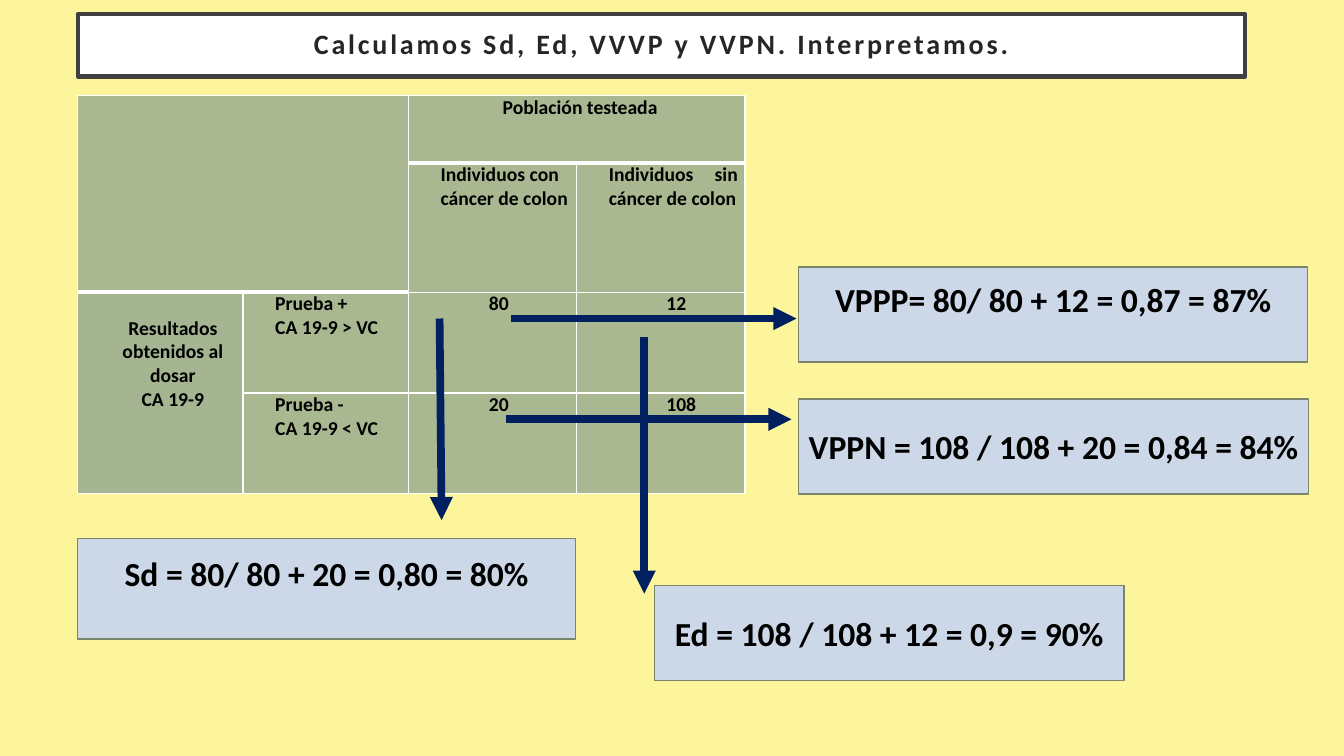
from lxml.etree import SubElement
from pptx import Presentation
from pptx.dml.color import RGBColor
from pptx.enum.shapes import MSO_CONNECTOR, MSO_SHAPE
from pptx.enum.text import MSO_ANCHOR, MSO_AUTO_SIZE, PP_ALIGN
from pptx.oxml.ns import qn
from pptx.util import Inches, Pt

CENTER, JUSTIFY = PP_ALIGN.CENTER, PP_ALIGN.JUSTIFY


def color(hex_code):
    return RGBColor.from_string(hex_code)


class SlideBuilder:
    font = "Calibri"
    background, text = "FDF59C", "000000"
    cell_fill, cell_border = "A5B592", "FFFFFF"
    box_fill, box_line, arrow = "CCD8E7", "7A866C", "002060"

    def __init__(self, prs):
        self.s = prs.slides.add_slide(prs.slide_layouts[5])
        fill = self.s.background.fill
        fill.solid()
        fill.fore_color.rgb = color(self.background)

    def paint(self, sp, fill, line, width):
        sp.fill.solid()
        sp.fill.fore_color.rgb = color(fill)
        sp.line.color.rgb = color(line)
        sp.line.width = Pt(width)

    def set_text(self, tf, lines, size, align, text=None):
        for i, line in enumerate(lines):
            p = tf.paragraphs[0] if i == 0 else tf.add_paragraph()
            p.text = line
            p.alignment = align
            p.font.name, p.font.size, p.font.bold = self.font, Pt(size), True
            p.font.color.rgb = color(text or self.text)

    def title(self, text, x, y, w, h):
        sp = self.s.shapes.title
        sp.left, sp.top, sp.width, sp.height = map(Inches, (x, y, w, h))
        self.paint(sp, "FFFFFF", "404040", 3)
        tf = sp.text_frame
        tf.word_wrap, tf.auto_size = True, MSO_AUTO_SIZE.NONE
        tf.vertical_anchor = MSO_ANCHOR.MIDDLE
        tf.margin_left = tf.margin_right = Inches(0.3)
        tf.margin_top = tf.margin_bottom = Inches(0.2)
        self.set_text(tf, [text], 20, CENTER, "262626")
        p = tf.paragraphs[0]
        p.line_spacing = 0.9
        p.font._rPr.set("spc", "200")

    def table(self, x, y, cols, rows, merges):
        frame = self.s.shapes.add_table(
            len(rows), len(cols), Inches(x), Inches(y),
            Inches(sum(cols)), Inches(sum(rows)))
        tbl = frame.table
        tbl.first_row = tbl.horz_banding = False
        for col, width in zip(tbl.columns, cols):
            col.width = Inches(width)
        for row, height in zip(tbl.rows, rows):
            row.height = Inches(height)
        for first, last in merges:
            tbl.cell(*first).merge(tbl.cell(*last))
        return tbl

    def cell(self, cell, lines=(), align=JUSTIFY, indent=0.25, top=0,
             top_border=1, bottom_border=1, alpha=94):
        cell.margin_left = cell.margin_right = Inches(0.07)
        cell.margin_top, cell.margin_bottom = Inches(top), 0
        tcPr = cell._tc.get_or_add_tcPr()
        borders = {"lnL": 1, "lnR": 1, "lnT": top_border, "lnB": bottom_border}
        for side, width in borders.items():
            ln = SubElement(tcPr, qn("a:" + side), w=str(Pt(width)))
            fill = SubElement(ln, qn("a:solidFill"))
            SubElement(fill, qn("a:srgbClr"), val=self.cell_border)
        cell.fill.solid()
        cell.fill.fore_color.rgb = color(self.cell_fill)
        clr = tcPr.find(qn("a:solidFill")).find(qn("a:srgbClr"))
        SubElement(clr, qn("a:alpha"), val=str(alpha * 1000))
        self.set_text(cell.text_frame, lines, 14, align)
        for p in cell.text_frame.paragraphs:
            pPr = p._p.get_or_add_pPr()
            pPr.set("marL", str(Inches(indent)))
            pPr.set("indent", "0")

    def arrow_line(self, x1, y1, x2, y2):
        cn = self.s.shapes.add_connector(
            MSO_CONNECTOR.STRAIGHT, *map(Inches, (x1, y1, x2, y2)))
        cn.line.color.rgb = color(self.arrow)
        cn.line.width = Pt(5.5)
        SubElement(cn.line._get_or_add_ln(), qn("a:tailEnd"), type="triangle")
        SubElement(cn._element.spPr, qn("a:effectLst"))

    def box(self, text, x, y, w, h, bottom=0.05):
        sp = self.s.shapes.add_shape(
            MSO_SHAPE.RECTANGLE, *map(Inches, (x, y, w, h)))
        sp.shadow.inherit = False
        self.paint(sp, self.box_fill, self.box_line, 1)
        tf = sp.text_frame
        tf.word_wrap = True
        tf.vertical_anchor = MSO_ANCHOR.MIDDLE
        tf.margin_left = tf.margin_right = Inches(0.05)
        tf.margin_bottom = Inches(bottom)
        self.set_text(tf, [text], 24, CENTER)


def main():
    prs = Presentation()
    prs.slide_width, prs.slide_height = Inches(13.33), Inches(7.5)
    b = SlideBuilder(prs)

    # Title
    b.title("Calculamos Sd, Ed, VVVP y VVPN. Interpretamos.",
            0.77, 0.14, 11.58, 0.62)

    # Contingency table: headers
    tbl = b.table(0.77, 0.95, [1.64, 1.64, 1.67, 1.67], [0.67, 1.28, 1, 1],
                  [((0, 0), (1, 1)), ((0, 2), (0, 3)), ((2, 0), (3, 0))])
    b.cell(tbl.cell(0, 0), bottom_border=3)
    b.cell(tbl.cell(0, 2), ["Población testeada"], CENTER, 0.07,
           bottom_border=3)
    b.cell(tbl.cell(1, 2), ["Individuos con", "cáncer de colon"], top_border=3)
    b.cell(tbl.cell(1, 3), ["Individuos sin cáncer de colon"], top_border=3)
    b.cell(tbl.cell(2, 0), ["Resultados obtenidos al dosar", "CA 19-9"],
           CENTER, top=0.24, top_border=3, alpha=100)

    # Contingency table: results
    results = [("+", ">", "80", "12", 3), ("-", "<", "20", "108", 1)]
    for row, (sign, relation, sick, healthy, top) in enumerate(results, 2):
        b.cell(tbl.cell(row, 1), [f"Prueba {sign}", f"CA 19-9 {relation} VC"],
               top_border=top)
        b.cell(tbl.cell(row, 2), [sick], indent=0.73)
        b.cell(tbl.cell(row, 3), [healthy], indent=0.82)

    # Arrows from the counts to the formulas
    for ends in [(5.07, 3.16, 7.9, 3.16), (4.36, 3.16, 4.38, 5.16),
                 (6.39, 3.34, 6.39, 5.89), (5.02, 4.16, 7.85, 4.16)]:
        b.arrow_line(*ends)

    # Formulas
    b.box("VPPP= 80/ 80 + 12 = 0,87 = 87%", 7.92, 2.65, 5.05, 0.94, 0.35)
    b.box("VPPN = 108 / 108 + 20 = 0,84 = 84%", 7.92, 3.96, 5.06, 0.94)
    b.box("Ed = 108 / 108 + 12 = 0,9 = 90%", 6.49, 5.81, 4.66, 0.94)
    b.box("Sd = 80/ 80 + 20 = 0,80 = 80%", 0.77, 5.34, 4.94, 1, 0.35)

    prs.save("out.pptx")


if __name__ == "__main__":
    main()
